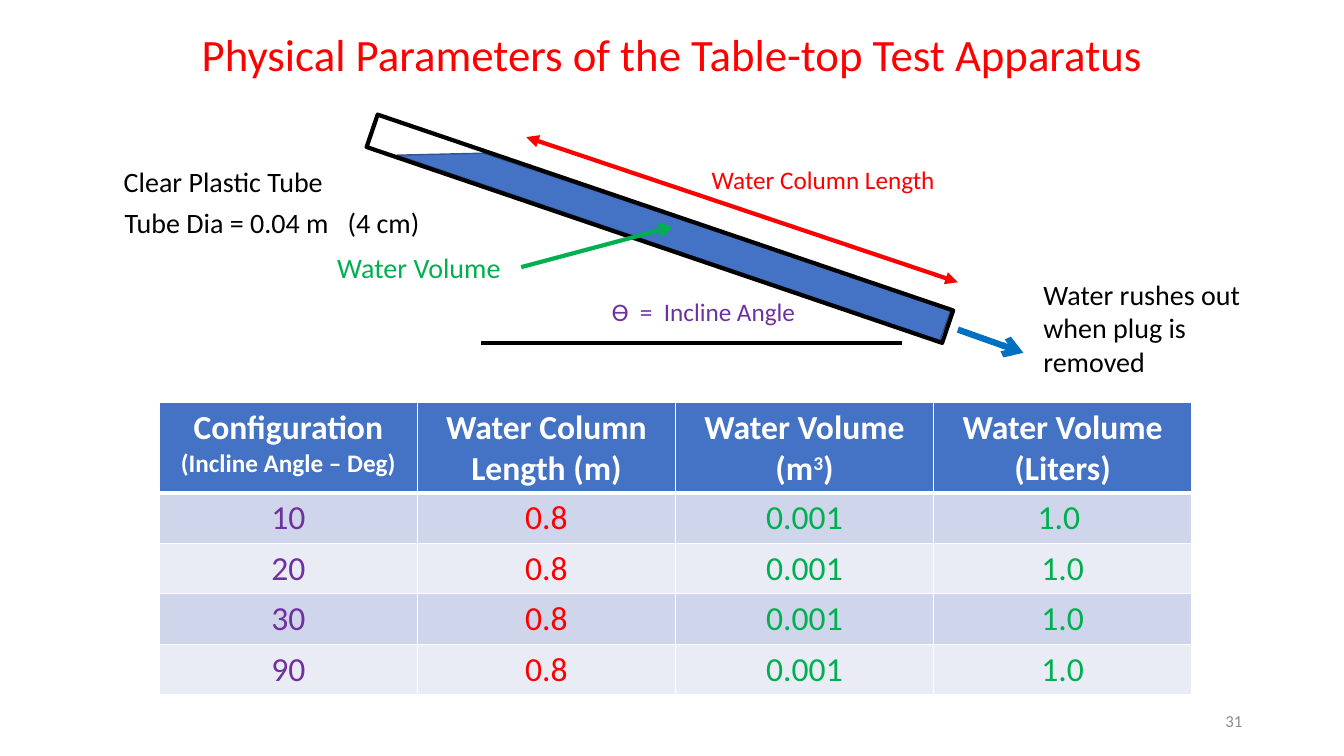
from lxml import etree
from pptx import Presentation
from pptx import util as u
from pptx.dml.color import RGBColor
from pptx.enum import shapes, text
from pptx.oxml import ns

BLACK, WHITE, RED = "000000", "FFFFFF", "FF0000"
GREEN, PURPLE, BLUE, GRAY = "00B050", "7030A0", "4472C4", "8C8C8C"
BANDS = ("CFD5EA", "E9EBF5")
LEFT, CENTER, RIGHT = text.PP_ALIGN.LEFT, text.PP_ALIGN.CENTER, text.PP_ALIGN.RIGHT


def rgb(color):
    return RGBColor.from_string(color)


class Sketch:
    font = "Calibri"

    def __init__(self, slide):
        self.slide = slide

    def run(self, paragraph, words, size, color, bold=False):
        run = paragraph.add_run()
        run.text = words
        run.font.name = self.font
        run.font.size = u.Pt(size)
        run.font.bold = bold
        run.font.color.rgb = rgb(color)
        return run

    def label(self, words, left, top, width, height, size, color, align=LEFT,
              anchor=text.MSO_ANCHOR.TOP):
        box = self.slide.shapes.add_textbox(*map(u.Inches, (left, top, width, height)))
        frame = box.text_frame
        frame.word_wrap = True
        frame.vertical_anchor = anchor
        frame.paragraphs[0].alignment = align
        self.run(frame.paragraphs[0], words, size, color)

    def line(self, start, end, color, width, head=None, tail=None):
        """Draw a straight line; head is the arrowhead at start, tail at end."""
        line = self.slide.shapes.add_connector(
            shapes.MSO_CONNECTOR.STRAIGHT, *map(u.Inches, (*start, *end)))
        line.line.color.rgb = rgb(color)
        line.line.width = u.Pt(width)
        for tag, arrow in (("a:headEnd", head), ("a:tailEnd", tail)):
            if arrow:
                etree.SubElement(line.line._get_or_add_ln(), ns.qn(tag), type=arrow)
        etree.SubElement(line._element.spPr, ns.qn("a:effectLst"))

    def outline(self, shape, color, width):
        shape.shadow.inherit = False
        shape.line.color.rgb = rgb(color)
        shape.line.width = u.Pt(width)

    def tube(self, left, top, width, height, angle):
        tube = self.slide.shapes.add_shape(
            shapes.MSO_SHAPE.RECTANGLE, *map(u.Inches, (left, top, width, height)))
        tube.rotation = angle
        tube.fill.background()
        self.outline(tube, BLACK, 3)

    def water(self, corners):
        first, *rest = [tuple(map(u.Inches, corner)) for corner in corners]
        builder = self.slide.shapes.build_freeform(*first)
        builder.add_line_segments(rest, close=True)
        water = builder.convert_to_shape()
        water.fill.solid()
        water.fill.fore_color.rgb = rgb(BLUE)
        self.outline(water, "325491", 1)

    def cell(self, cell, lines, fill, bottom=1):
        """Fill a cell; lines holds one list of (words, size, color, bold, raised) per paragraph."""
        properties = cell._tc.get_or_add_tcPr()
        for side, width in (("L", 1), ("R", 1), ("T", 1), ("B", bottom)):
            border = etree.SubElement(properties, ns.qn(f"a:ln{side}"), w=str(u.Pt(width)))
            solid = etree.SubElement(border, ns.qn("a:solidFill"))
            etree.SubElement(solid, ns.qn("a:srgbClr"), val=WHITE)
        cell.fill.solid()
        cell.fill.fore_color.rgb = rgb(fill)
        frame = cell.text_frame
        for index, runs in enumerate(lines):
            paragraph = frame.add_paragraph() if index else frame.paragraphs[0]
            paragraph.alignment = CENTER
            for words, size, color, bold, raised in runs:
                run = self.run(paragraph, words, size, color, bold)
                if raised:
                    run.font._element.set("baseline", "30000")

    def table(self, headings, rows, colors, left, top, width, heights):
        table = self.slide.shapes.add_table(
            len(rows) + 1, len(headings),
            *map(u.Inches, (left, top, width, sum(heights)))).table
        for row, height in zip(table.rows, heights):
            row.height = u.Inches(height)
        for column, heading in enumerate(headings):
            lines = [[(words, size, WHITE, True, raised) for words, size, raised in runs]
                     for runs in heading]
            self.cell(table.cell(0, column), lines, BLUE, bottom=3)
        for number, values in enumerate(rows):
            for column, (value, color) in enumerate(zip(values, colors)):
                self.cell(table.cell(number + 1, column),
                          [[(value, 24, color, False, False)]], BANDS[number % 2])


def main():
    deck = Presentation()
    deck.slide_width, deck.slide_height = u.Inches(13.33), u.Inches(7.5)
    sketch = Sketch(deck.slides.add_slide(deck.slide_layouts[6]))

    sketch.label("Physical Parameters of the Table-top Test Apparatus",
                 1.54, 0.22, 10.25, 0.64, 32, RED, CENTER)

    sketch.label("Clear Plastic Tube", 0.83, 1.58, 2.77, 0.44, 20, BLACK, CENTER)
    sketch.label("Tube Dia = 0.04 m   (4 cm)", 1.02, 1.99, 3.36, 0.44, 20, BLACK, CENTER)
    sketch.line((8.95, 3.4), (4.77, 3.4), BLACK, 3)
    sketch.label("ϴ  =  Incline Angle", 5.97, 2.89, 2.35, 0.4, 18, PURPLE)
    sketch.water([(3.94, 1.54), (4.8, 1.52), (9.43, 3.08), (9.32, 3.38)])
    sketch.tube(3.53, 2.1, 6.03, 0.34, 18.8)
    sketch.label("Water Volume", 2.77, 2.44, 2.77, 0.44, 20, GREEN, CENTER)
    sketch.line((5.17, 2.65), (6.67, 2.25), GREEN, 3, tail="arrow")
    sketch.line((5.22, 1.36), (9.5, 2.8), RED, 3, head="triangle", tail="triangle")
    sketch.label("Water Column Length", 6.96, 1.58, 2.58, 0.4, 18, RED)
    sketch.line((9.5, 3.27), (10.15, 3.5), "0070C0", 4.5, tail="arrow")
    sketch.label("Water rushes out when plug is removed", 10.25, 2.7, 2.49, 1.11, 20, BLACK)

    headings = [
        [[("Configuration", 24, False)], [("(Incline Angle – Deg)", 18, False)]],
        [[("Water Column Length (m)", 24, False)]],
        [[("Water Volume", 24, False)],
         [("(m", 24, False), ("3", 24, True), (")", 24, False)]],
        [[("Water Volume", 24, False)], [("(Liters)", 24, False)]],
    ]
    rows = [
        ("10", "0.8", "0.001", "1.0 "),
        ("20", "0.8", "0.001", "1.0"),
        ("30", "0.8", "0.001", "1.0"),
        ("90", "0.8", "0.001", "1.0"),
    ]
    sketch.table(headings, rows, (PURPLE, RED, GREEN, GREEN),
                 1.58, 3.99, 10.24, [0.9] + [0.5] * len(rows))

    sketch.label("31", 9.42, 6.95, 3, 0.4, 12, GRAY, RIGHT, text.MSO_ANCHOR.MIDDLE)
    deck.save("out.pptx")


if __name__ == "__main__":
    main()
